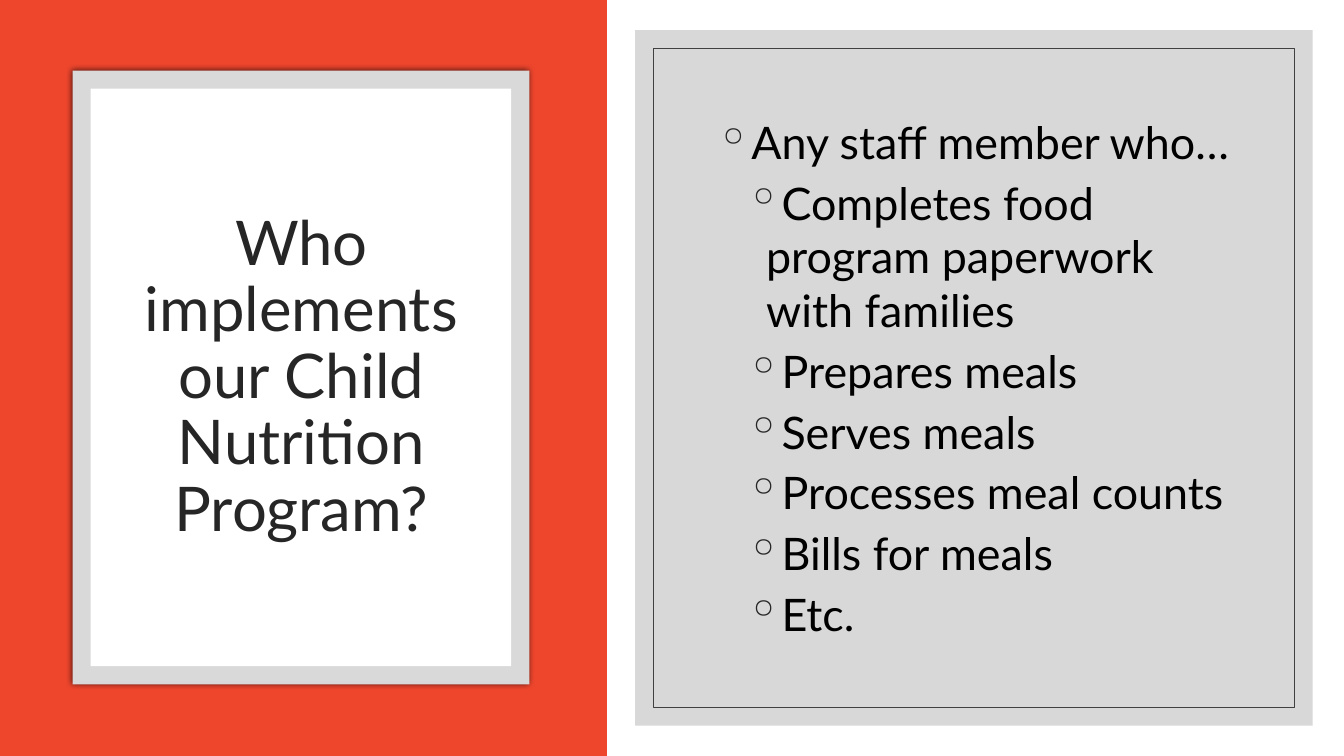
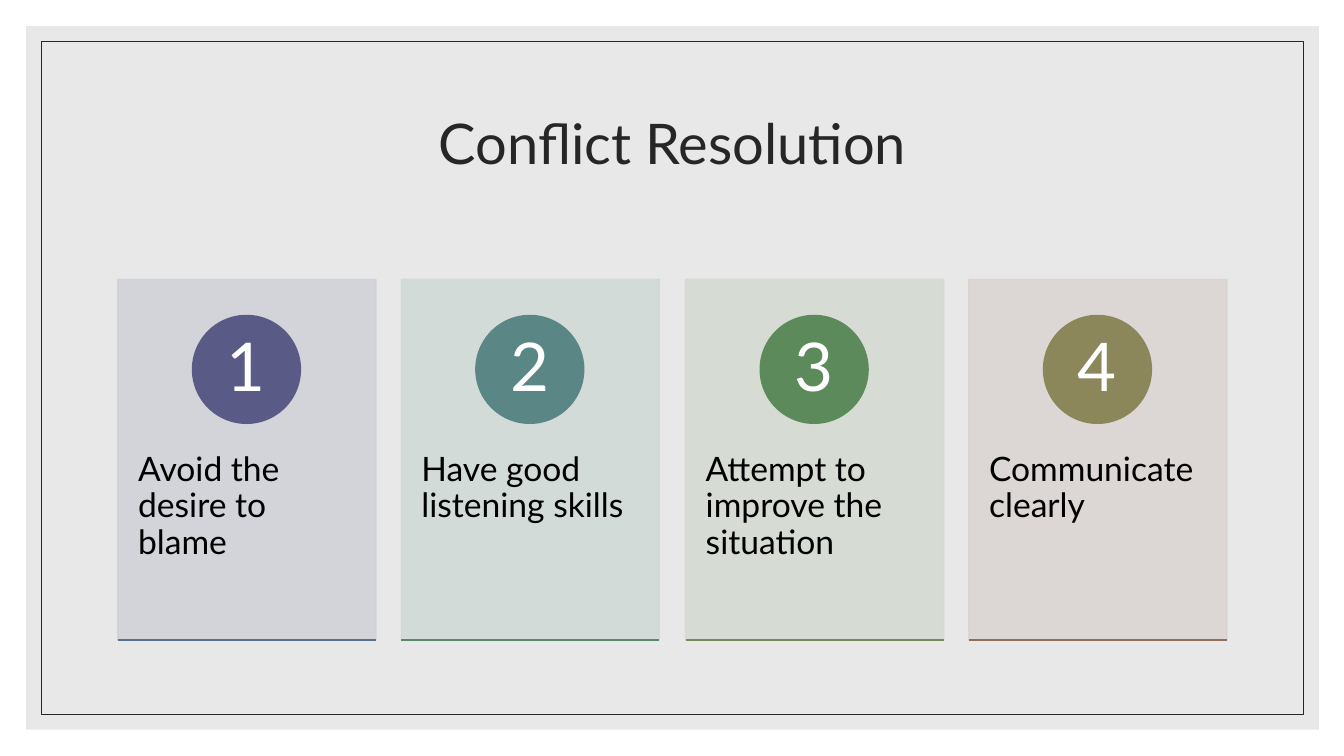
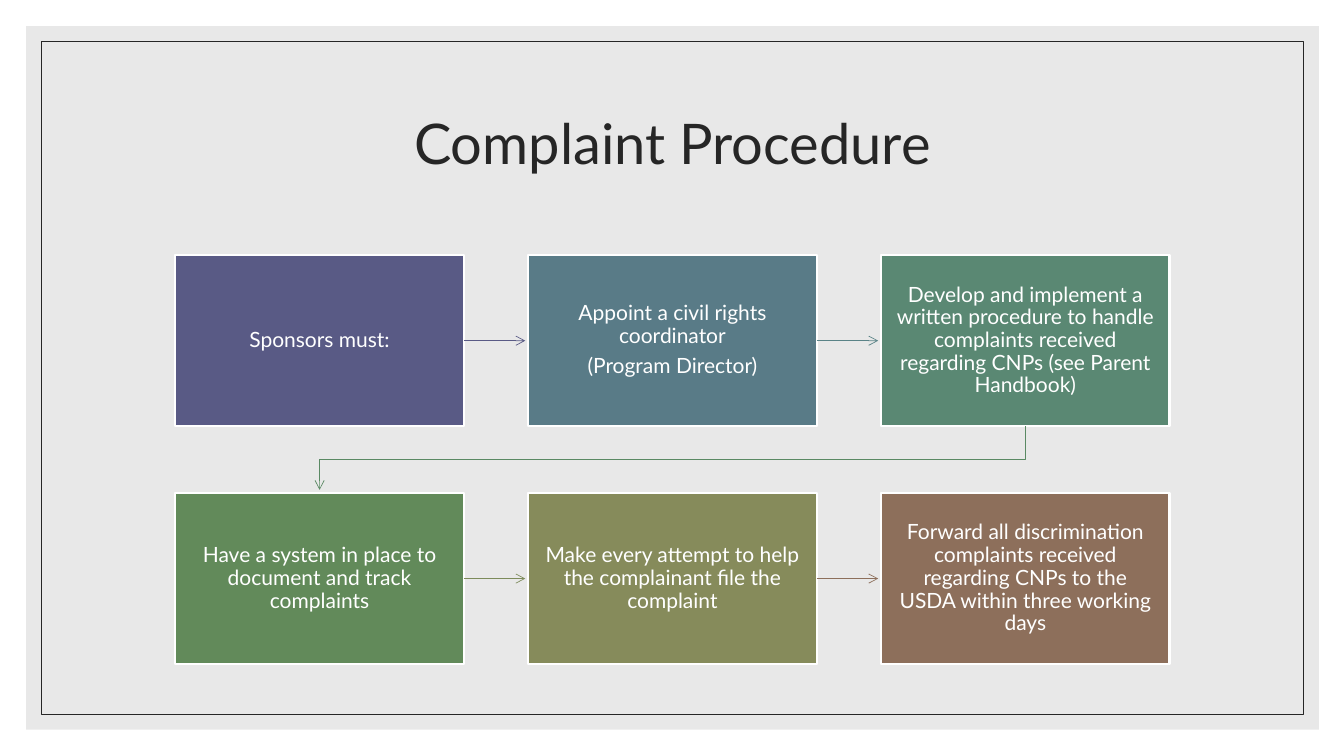
from lxml import etree
from pptx import Presentation
from pptx import util as u
from pptx.dml.color import RGBColor
from pptx.enum import shapes, text
from pptx.oxml import ns

PX = 9144  # EMU per px, 100 px to the inch
FONT = "Lato"

WHITE = RGBColor(0xFF, 0xFF, 0xFF)
BLACK = RGBColor(0x00, 0x00, 0x00)
INK = RGBColor(0x26, 0x26, 0x26)
CHARCOAL = RGBColor(0x40, 0x40, 0x40)
SILVER = RGBColor(0xD9, 0xD9, 0xD9)
GREY = RGBColor(0xBF, 0xBF, 0xBF)
RED = RGBColor(0xEE, 0x46, 0x2D)
INDIGO = RGBColor(0x59, 0x5A, 0x85)
BROWN = RGBColor(0x8D, 0x6F, 0x5B)

CENTER = text.PP_ALIGN.CENTER
LEFT = text.PP_ALIGN.LEFT
TOP = text.MSO_ANCHOR.TOP
MIDDLE = text.MSO_ANCHOR.MIDDLE
RECT = shapes.MSO_SHAPE.RECTANGLE
OVAL = shapes.MSO_SHAPE.OVAL

TASKS = ["Completes food program paperwork with families", "Prepares meals",
         "Serves meals", "Processes meal counts", "Bills for meals", "Etc."]

# wording, card colour, circle colour, base line colour
CARDS = [
    ("Avoid the desire to blame", RGBColor(0xD1, 0xD2, 0xD9), INDIGO,
     RGBColor(0x59, 0x71, 0x86)),
    ("Have good listening skills", RGBColor(0xD1, 0xDA, 0xD8),
     RGBColor(0x5A, 0x87, 0x85), RGBColor(0x5A, 0x88, 0x6F)),
    ("Attempt to improve the situation", RGBColor(0xD5, 0xDA, 0xD2),
     RGBColor(0x5D, 0x8A, 0x5A), RGBColor(0x76, 0x8B, 0x5A)),
    ("Communicate clearly", RGBColor(0xDB, 0xD5, 0xD2),
     RGBColor(0x8C, 0x87, 0x5B), BROWN),
]

# paragraphs, box colour, colour of the arrow leaving the box
STEPS = [
    (["Sponsors must:"], INDIGO, INDIGO),
    (["Appoint a civil rights coordinator", "(Program Director)"],
     RGBColor(0x59, 0x7B, 0x87), RGBColor(0x5A, 0x83, 0x87)),
    (["Develop and implement a written procedure to handle complaints "
      "received regarding CNPs (see Parent Handbook)"],
     RGBColor(0x5A, 0x88, 0x73), RGBColor(0x5A, 0x89, 0x63)),
    (["Have a system in place to document and track complaints"],
     RGBColor(0x62, 0x8A, 0x5A), RGBColor(0x7D, 0x8B, 0x5B)),
    (["Make every attempt to help the complainant file the complaint"],
     RGBColor(0x86, 0x8B, 0x5B), BROWN),
    (["Forward all discrimination complaints received regarding CNPs to the "
      "USDA within three working days"], BROWN, None),
]


def emu(*lengths):
    return [u.Emu(round(length) * PX) for length in lengths]


def add_xml(parent, tag, **attributes):
    return etree.SubElement(parent, ns.qn(tag), attributes)


def set_line(line, colour, width):
    line.color.rgb = colour
    line.width = u.Pt(width)


def add_block(page, at, fill=None, line=None, width=1, kind=RECT, opacity=100):
    """Add a preset shape; opacity in percent goes for both fill and line."""
    block = page.shapes.add_shape(kind, *emu(*at))
    block.shadow.inherit = False
    if fill is None:
        block.fill.background()
    else:
        block.fill.solid()
        block.fill.fore_color.rgb = fill
    if line is None:
        block.line.fill.background()
    else:
        set_line(block.line, line, width)
    if opacity < 100:
        for colour in list(block._element.spPr.iter(ns.qn("a:srgbClr"))):
            add_xml(colour, "a:alpha", val=str(opacity * 1000))
    return block


def add_glow(block):
    """Give the block a soft shadow that spreads evenly on all sides."""
    effects = block._element.spPr.find(ns.qn("a:effectLst"))
    shadow = add_xml(effects, "a:outerShdw", blurRad=str(u.Pt(4)), dist="0",
                     algn="ctr", rotWithShape="0")
    colour = add_xml(shadow, "a:srgbClr", val=str(BLACK))
    add_xml(colour, "a:alpha", val="66000")


def prepare_frame(shape, anchor=MIDDLE, insets=(10, 5, 10, 5)):
    frame = shape.text_frame
    frame.word_wrap = True
    frame.vertical_anchor = anchor
    (frame.margin_left, frame.margin_top,
     frame.margin_right, frame.margin_bottom) = emu(*insets)
    return frame


def add_para(frame, index, words, size, colour, align=CENTER, spacing=0.9):
    para = frame.paragraphs[0] if index == 0 else frame.add_paragraph()
    para.text = words
    para.alignment = align
    para.line_spacing = spacing
    para.font.name = FONT
    para.font.size = u.Pt(size)
    para.font.color.rgb = colour
    return para


def add_title(page, words, at=(117, 70, 1100, 150), size=40):
    box = page.shapes.add_textbox(*emu(*at))
    add_para(prepare_frame(box), 0, words, size, INK)


def add_bullet(para, indent):
    """Hang a ring bullet 20 px left of the indent."""
    props = para._p.get_or_add_pPr()
    props.set("marL", str(indent * PX))
    props.set("indent", str(-20 * PX))
    colour = etree.Element(ns.qn("a:buClr"))
    add_xml(colour, "a:srgbClr", val=str(INK))
    ring = etree.Element(ns.qn("a:buChar"), char="◦")
    font = props.find(ns.qn("a:defRPr"))
    font.addprevious(colour)
    font.addprevious(ring)


def add_panel(page, at, margin, fill, line):
    """Add a pale panel with a thin outline set in by the margin."""
    left, top, width, height = at
    add_block(page, at, fill, opacity=60)
    inner = (left + margin, top + margin, width - 2 * margin, height - 2 * margin)
    add_block(page, inner, line=line, width=0.5)


def add_straight(page, start, end, colour, width):
    line = page.shapes.add_connector(shapes.MSO_CONNECTOR.STRAIGHT,
                                     *emu(*start, *end))
    set_line(line.line, colour, width)
    add_xml(line._element.spPr, "a:effectLst")
    return line


def add_arrowhead(line):
    add_xml(line.line._get_or_add_ln(), "a:tailEnd", type="arrow")


def add_page(deck):
    page = deck.slides.add_slide(deck.slide_layouts[6])
    page.background.fill.solid()
    page.background.fill.fore_color.rgb = WHITE
    return page


def add_framed_page(deck, title):
    page = add_page(deck)
    add_panel(page, (26, 26, 1282, 698), 15, SILVER, INK)
    add_title(page, title)
    return page


def build_staff(deck):
    page = add_page(deck)
    add_block(page, (-1, 0, 603, 750), RED)
    add_glow(add_block(page, (72, 70, 453, 609), SILVER))
    add_block(page, (90, 88, 417, 573), WHITE)
    add_title(page, "Who implements our Child Nutrition Program?",
              (108, 130, 382, 491), 44)
    add_panel(page, (630, 30, 672, 690), 18, GREY, CHARCOAL)
    frame = prepare_frame(page.shapes.add_textbox(*emu(700, 102, 533, 545)))
    for index, words in enumerate(["Any staff member who…"] + TASKS):
        para = add_para(frame, index, words, 32, BLACK, LEFT, 1.0)
        para.level = min(index, 1)
        para.space_before = u.Pt(5 if index else 9)
        add_bullet(para, 50 if index else 20)


def add_card(page, left, number, words, fill, accent, base):
    top, width, height = 277, 256, 358
    card = add_block(page, (left, top, width, height), fill, fill, opacity=90)
    frame = prepare_frame(card, TOP, (20, 172, 20, 36))
    add_para(frame, 0, words, 24, BLACK, LEFT)
    circle = add_block(page, (left + 74, top + 36, 107, 107), accent, accent,
                       kind=OVAL)
    add_para(prepare_frame(circle, insets=(0, 0, 0, 0)), 0, str(number), 48, WHITE)
    bottom = top + height
    add_straight(page, (left, bottom), (left + width, bottom), base, 1)


def build_conflict(deck):
    page = add_framed_page(deck, "Conflict Resolution")
    pitch = (1100 - 256) / (len(CARDS) - 1)
    for index, card in enumerate(CARDS):
        add_card(page, round(117 + index * pitch), index + 1, *card)


def add_step(page, at, wording, fill):
    box = add_block(page, at, fill, WHITE, 1.5)
    frame = prepare_frame(box, insets=(14, 15, 14, 15))
    for index, words in enumerate(wording):
        para = add_para(frame, index, words, 15, WHITE)
        if index:
            para.space_before = u.Pt(5.5)
    return box


def add_return_arrow(page, points, colour):
    builder = page.shapes.build_freeform(*points[0], scale=PX)
    builder.add_line_segments(points[1:], close=False)
    arrow = builder.convert_to_shape()
    arrow.shadow.inherit = False
    arrow.fill.background()
    set_line(arrow.line, colour, 0.5)
    add_arrowhead(arrow)


def build_complaint(deck):
    page = add_framed_page(deck, "Complaint Procedure")
    columns, width, height = 3, 286, 170
    for index, (wording, fill, arrow_colour) in enumerate(STEPS):
        row, column = divmod(index, columns)
        left, top = 174 + 350 * column, 253 + 236 * row
        box = add_step(page, (left, top, width, height), wording, fill)
        if arrow_colour is None:
            continue
        if column < columns - 1:
            middle = top + height // 2
            arrow = add_straight(page, (left + width, middle),
                                 (left + 347, middle), arrow_colour, 0.5)
            arrow.begin_connect(box, 3)
            add_arrowhead(arrow)
        else:
            start, end = left + width // 2, 174 + width // 2
            bottom = top + height
            turn = bottom + 33
            add_return_arrow(page, [(start, bottom), (start, turn),
                                    (end, turn), (end, top + 233)], arrow_colour)


def main():
    deck = Presentation()
    deck.slide_width, deck.slide_height = emu(1333, 750)
    build_staff(deck)
    build_conflict(deck)
    build_complaint(deck)
    deck.save("out.pptx")


if __name__ == "__main__":
    main()
